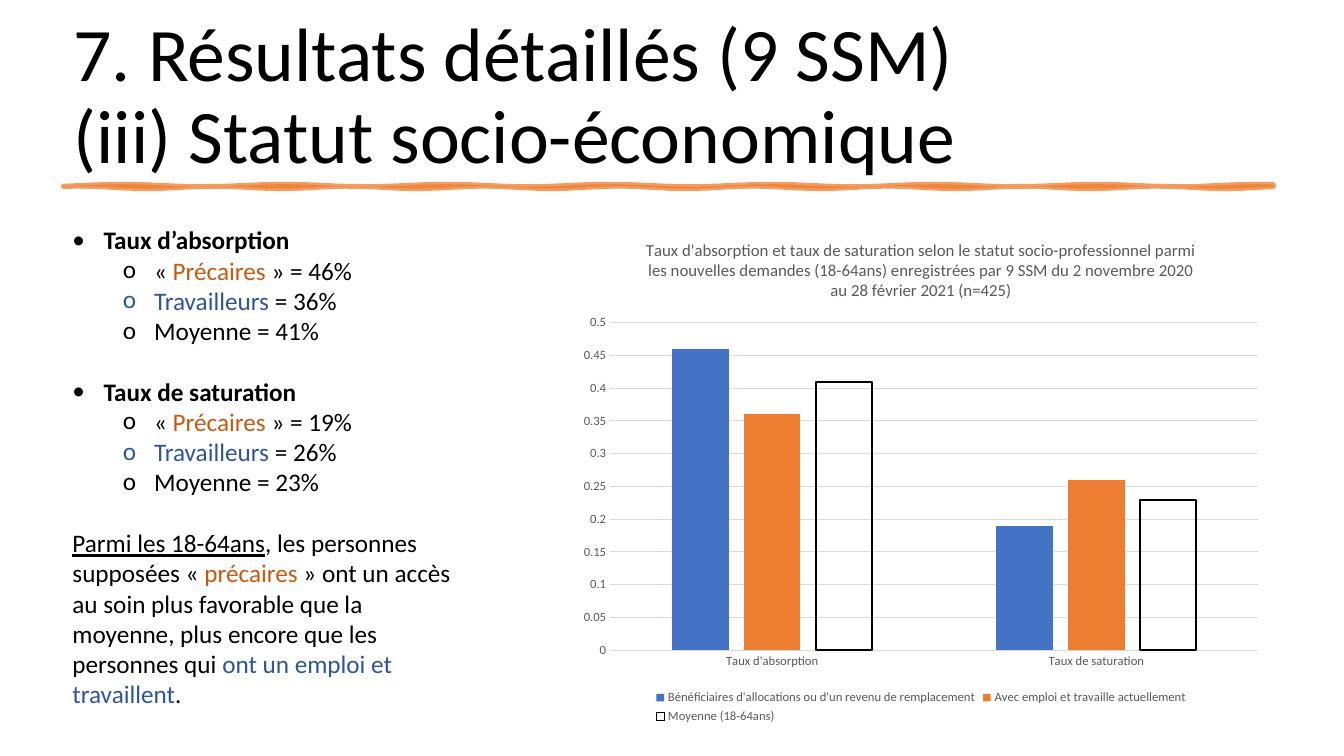
import math

from lxml import etree
from pptx import Presentation
from pptx.chart.data import CategoryChartData
from pptx.dml.color import RGBColor
from pptx.enum.chart import XL_CHART_TYPE, XL_LEGEND_POSITION, XL_TICK_MARK
from pptx.enum.text import MSO_ANCHOR, MSO_AUTO_SIZE, PP_ALIGN
from pptx.oxml.ns import qn
from pptx.util import Inches, Pt

COLUMNS = XL_CHART_TYPE.COLUMN_CLUSTERED
BOTTOM = XL_LEGEND_POSITION.BOTTOM
NO_TICK = XL_TICK_MARK.NONE
FONT = "Calibri"
COLORS = {
    "ink": "000000",
    "grey": "595959",
    "grid": "D9D9D9",
    "blue": "4472C4",
    "orange": "ED7D31",
    "precarious": "C55A11",
    "workers": "2F5597",
}


def style(font, size, color="ink", bold=False):
    font.name = FONT
    font.size = Pt(size)
    font.bold = bold
    font.color.rgb = RGBColor.from_string(COLORS[color])


def set_bullet(paragraph, char, margin, hanging):
    properties = paragraph._p.get_or_add_pPr()
    properties.set("marL", str(Inches(margin)))
    properties.set("indent", str(-Inches(hanging)))
    etree.SubElement(properties, qn("a:buFont")).set("typeface", FONT)
    etree.SubElement(properties, qn("a:buChar")).set("char", char)


prs = Presentation()
prs.slide_width = Inches(13.33)
prs.slide_height = Inches(7.5)
slide = prs.slides.add_slide(prs.slide_layouts[5])

LEFT, WIDTH = 0.63, 12
BODY_TOP = 2.18

title = slide.shapes.title
title.left, title.top = Inches(LEFT), Inches(0.26)
title.width, title.height = Inches(12.05), Inches(1.57)
heading = title.text_frame
heading.text = "7. Résultats détaillés (9 SSM)\v(iii) Statut socio-économique"
heading.auto_size = MSO_AUTO_SIZE.NONE
heading.word_wrap = True
heading.vertical_anchor = MSO_ANCHOR.BOTTOM
heading.paragraphs[0].alignment = PP_ALIGN.LEFT
heading.paragraphs[0].line_spacing = 0.9
for run in heading.paragraphs[0].runs:
    style(run.font, 54)

STEPS = 120
brush_edge = []
for step in range(STEPS + 1):
    x = LEFT + WIDTH * step / STEPS
    brush_edge.append((x, 1.84 + 0.012 * math.sin(3.9 * x)))
for step in range(STEPS, -1, -1):
    x = LEFT + WIDTH * step / STEPS
    brush_edge.append((x, 1.86 + 0.012 * math.sin(4.7 * x + 1)))
brush_points = [(Inches(x), Inches(y)) for x, y in brush_edge]
brush_builder = slide.shapes.build_freeform(*brush_points[0])
brush_builder.add_line_segments(brush_points[1:], close=True)
brush = brush_builder.convert_to_shape()
brush.shadow.inherit = False
brush.line.width = Pt(3.5)
for paint in (brush.fill, brush.line.fill):
    paint.solid()
    paint.fore_color.rgb = RGBColor.from_string(COLORS["orange"])
for color_element in brush._element.spPr.iter(qn("a:srgbClr")):
    etree.SubElement(color_element, qn("a:alpha")).set("val", "75000")

findings = slide.shapes.add_textbox(
    Inches(0.62), Inches(BODY_TOP), Inches(3.96), Inches(4.95)
).text_frame
findings.word_wrap = True
rates = [
    ("Taux d’absorption", "46%", "36%", "41%"),
    ("Taux de saturation", "19%", "26%", "23%"),
]
paragraphs = []
for rate, precarious, workers, average in rates:
    paragraphs += [
        ("•", [(rate, "ink")]),
        ("o", [("« ", "ink"), ("Précaires", "precarious"), (f" » = {precarious}", "ink")]),
        ("o", [("Travailleurs", "workers"), (f" = {workers}", "ink")]),
        ("o", [(f"Moyenne = {average}", "ink")]),
    ]
paragraphs.append(("", [
    ("Parmi les 18-64ans", "ink"),
    (", les personnes supposées « ", "ink"),
    ("précaires", "precarious"),
    (" » ont un accès au soin plus favorable que la moyenne, "
     "plus encore que les personnes qui ", "ink"),
    ("ont un emploi et travaillent", "workers"),
    (".", "ink"),
]))
for index, (bullet, pieces) in enumerate(paragraphs):
    paragraph = findings.add_paragraph() if index else findings.paragraphs[0]
    if bullet == "o":
        paragraph.level = 1
    elif index:
        paragraph.space_before = Pt(21.7)
    if bullet:
        set_bullet(paragraph, bullet, 0.81 if bullet == "o" else 0.31, 0.31)
    for text, color in pieces:
        run = paragraph.add_run()
        run.text = text
        style(run.font, 18, color, bold=bullet == "•")
paragraph.runs[0].font.underline = True

data = CategoryChartData()
data.categories = ["Taux d'absorption", "Taux de saturation"]
data.add_series("Bénéficiaires d'allocations ou d'un revenu de remplacement", (0.46, 0.19))
data.add_series("Avec emploi et travaille actuellement", (0.36, 0.26))
data.add_series("Moyenne (18-64ans)", (0.41, 0.23))
chart = slide.shapes.add_chart(
    COLUMNS, Inches(5.65), Inches(BODY_TOP), Inches(6.97), Inches(5.04), data
).chart
style(chart.font, 10)
chart.has_title = True
caption = chart.chart_title.text_frame
caption.text = (
    "Taux d'absorption et taux de saturation selon le statut socio-professionnel parmi "
    "les nouvelles demandes (18-64ans) enregistrées par 9 SSM du 2 novembre 2020 "
    "au 28 février 2021 (n=425)"
)
style(caption.paragraphs[0].runs[0].font, 12, "grey")
chart.chart_title.include_in_layout = False
chart.has_legend = True
chart.legend.position = BOTTOM
chart.legend.include_in_layout = False
style(chart.legend.font, 9, "grey")

rate_axis, status_axis = chart.value_axis, chart.category_axis
for axis in (rate_axis, status_axis):
    axis.major_tick_mark = NO_TICK
    axis.minor_tick_mark = NO_TICK
    style(axis.tick_labels.font, 9, "grey")
rate_axis.minimum_scale, rate_axis.maximum_scale = 0, 0.5
rate_axis.major_unit = 0.05
rate_axis.format.line.fill.background()
for rule in (rate_axis.major_gridlines.format.line, status_axis.format.line):
    rule.color.rgb = RGBColor.from_string(COLORS["grid"])
    rule.width = Pt(0.75)

plot = chart.plots[0]
plot.vary_by_categories = False
plot.gap_width = 219
plot.overlap = -27
beneficiaries, employed, average = plot.series
for group, color in ((beneficiaries, "blue"), (employed, "orange")):
    group.format.fill.solid()
    group.format.fill.fore_color.rgb = RGBColor.from_string(COLORS[color])
average.format.fill.background()
average.format.line.color.rgb = RGBColor.from_string(COLORS["ink"])
average.format.line.width = Pt(1.5)

prs.save("out.pptx")
